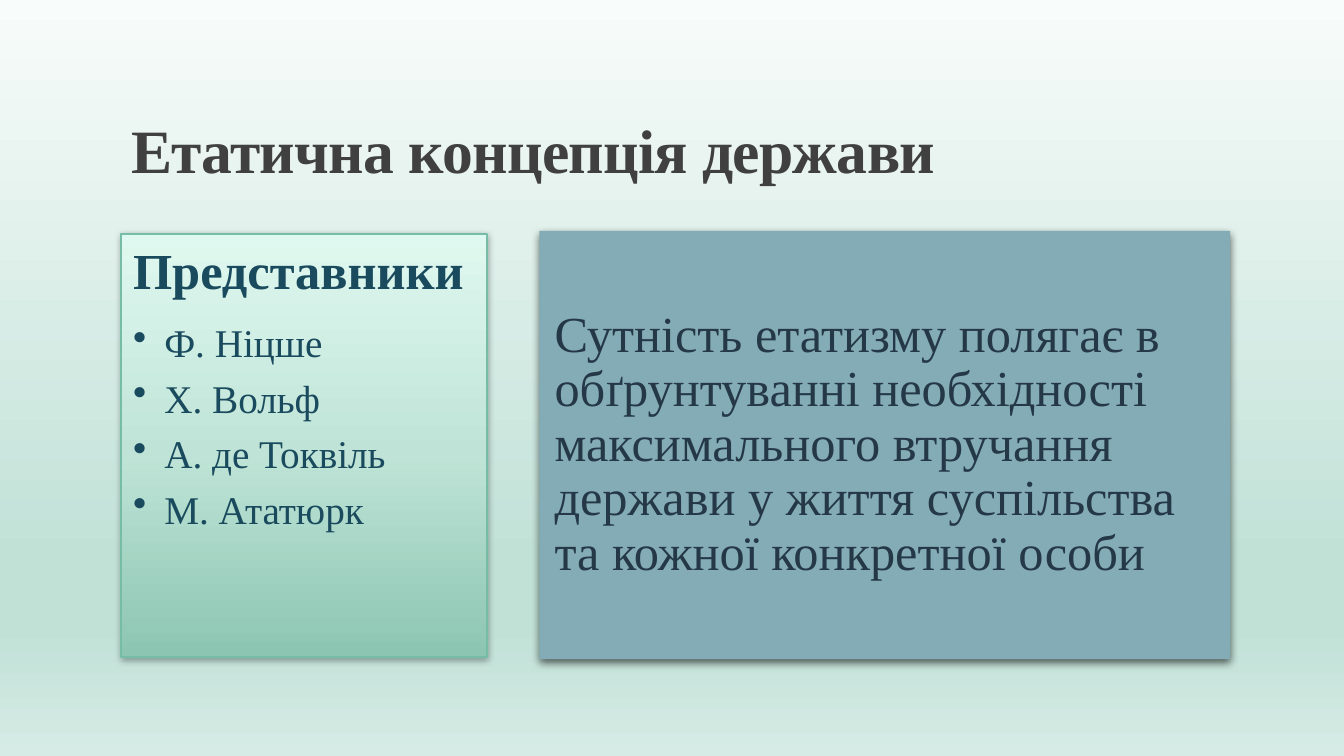
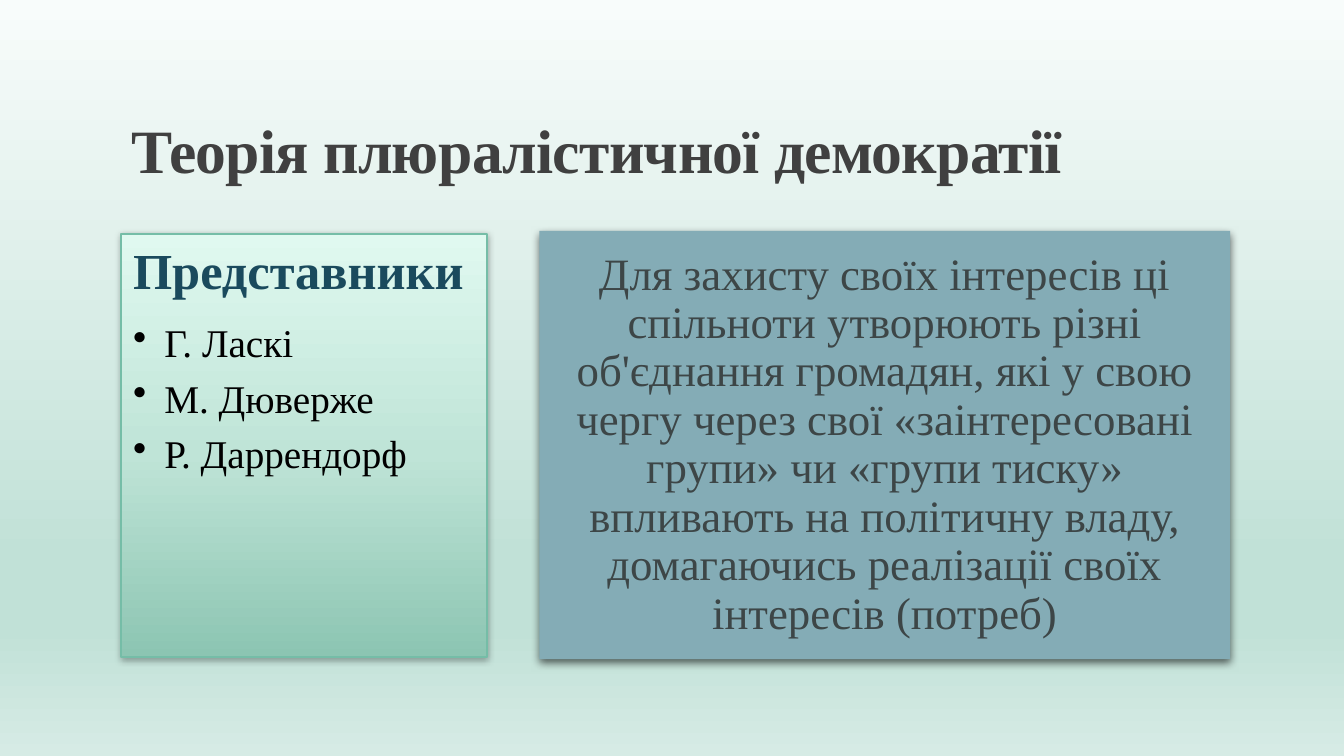
from dataclasses import dataclass

from lxml import etree
from pptx import Presentation
from pptx.dml.color import RGBColor
from pptx.enum.shapes import MSO_SHAPE
from pptx.enum.text import MSO_ANCHOR, MSO_AUTO_SIZE, PP_ALIGN
from pptx.oxml.ns import qn
from pptx.util import Inches, Pt

RECTANGLE = MSO_SHAPE.RECTANGLE
TOP, MIDDLE, BOTTOM = MSO_ANCHOR.TOP, MSO_ANCHOR.MIDDLE, MSO_ANCHOR.BOTTOM
LEFT, CENTER = PP_ALIGN.LEFT, PP_ALIGN.CENTER
NO_AUTOFIT = MSO_AUTO_SIZE.NONE

FONT = "Times New Roman"
TITLE_GREY = RGBColor(0x40, 0x40, 0x40)
DEEP_TEAL = RGBColor(0x1A, 0x4A, 0x5D)
NAVY = RGBColor(0x25, 0x38, 0x48)
SLATE = RGBColor(0x3D, 0x46, 0x47)
BLACK = RGBColor(0x00, 0x00, 0x00)
MINT_LINE = RGBColor(0x75, 0xBD, 0xA7)
STEEL_BLUE = RGBColor(0x84, 0xAC, 0xB6)

# Gradient stops: position in percent, colour
BACKGROUND_STOPS = (
    (0, RGBColor(0xF8, 0xFC, 0xFB)),
    (74, RGBColor(0xC1, 0xE1, 0xD7)),
    (83, RGBColor(0xC1, 0xE1, 0xD7)),
    (100, RGBColor(0xD6, 0xEB, 0xE5)),
)
PANEL_STOPS = (
    (0, RGBColor(0x8C, 0xC5, 0xB2)),
    (48, RGBColor(0xBF, 0xE4, 0xD7)),
    (100, RGBColor(0xE0, 0xF9, 0xF0)),
)
DOWNWARD, UPWARD = 270, 90


@dataclass(frozen=True)
class Box:
    left: float
    top: float
    width: float
    height: float

    def lengths(self) -> tuple:
        return tuple(Inches(v) for v in (self.left, self.top, self.width, self.height))


@dataclass(frozen=True)
class Shadow:
    opacity: int
    blur: float
    distance: float


@dataclass(frozen=True)
class Concept:
    title: str
    thinkers: tuple
    thinker_color: RGBColor
    essence: str
    essence_size: int
    essence_color: RGBColor
    essence_align: PP_ALIGN
    essence_inset: float


TITLE_BOX = Box(1.2, 0.31, 11, 1.59)
THINKERS_BOX = Box(1.2, 2.32, 3.63, 4.2)
ESSENCE_BOX = Box(5.35, 2.29, 6.85, 4.25)
THINKERS_SHADOW = Shadow(32, 5, 1)
ESSENCE_SHADOW = Shadow(60, 6, 3)
THINKERS_INSET = 0.12
BULLET_INDENT = Inches(0.31)
HEADING = "Представники"

CONCEPTS = (
    Concept(
        "Етатична концепція держави",
        ("Ф. Ніцше", "Х. Вольф", "А. де Токвіль", "М. Ататюрк"),
        DEEP_TEAL,
        "Сутність етатизму полягає в обґрунтуванні необхідності максимального "
        "втручання держави у життя суспільства та кожної конкретної особи",
        36, NAVY, LEFT, 0.15,
    ),
    Concept(
        "Теорія плюралістичної демократії",
        ("Г. Ласкі", "М. Дюверже", "Р. Даррендорф"),
        BLACK,
        "Для захисту своїх інтересів ці спільноти утворюють різні об'єднання "
        "громадян, які у свою чергу через свої «заінтересовані групи» чи «групи "
        "тиску» впливають на політичну владу, домагаючись реалізації своїх "
        "інтересів (потреб)",
        32, SLATE, CENTER, 0.13,
    ),
)


def apply(target, values: dict) -> None:
    for name, value in values.items():
        setattr(target, name, value)


def set_gradient(fill, owner, stops: tuple, angle: int) -> None:
    """Fill with any number of stops; owner is the element holding the fill."""
    fill.gradient()
    fill.gradient_angle = angle
    stop_list = owner.find(".//" + qn("a:gsLst"))
    for old_stop in list(stop_list):
        stop_list.remove(old_stop)
    for position, color in stops:
        stop = etree.SubElement(stop_list, qn("a:gs"), pos=str(position * 1000))
        etree.SubElement(stop, qn("a:srgbClr"), val=str(color))


def set_shadow(shape, shadow: Shadow) -> None:
    shape.shadow.inherit = False
    effects = shape.element.spPr.find(qn("a:effectLst"))
    outer = etree.SubElement(
        effects, qn("a:outerShdw"), blurRad=str(Pt(shadow.blur)),
        dist=str(Pt(shadow.distance)), dir="5400000", algn="ctr", rotWithShape="0")
    color = etree.SubElement(outer, qn("a:srgbClr"), val=str(BLACK))
    etree.SubElement(color, qn("a:alpha"), val=str(shadow.opacity * 1000))


def write(paragraph, text: str, size: int, color: RGBColor, bold: bool = False,
          **layout):
    run = paragraph.add_run()
    run.text = text
    apply(run.font, {"name": FONT, "size": Pt(size), "bold": bold})
    run.font.color.rgb = color
    apply(paragraph, {"alignment": LEFT, **layout})
    return run


def add_bullet(paragraph) -> None:
    properties = paragraph._p.get_or_add_pPr()
    properties.set("marL", str(BULLET_INDENT))
    properties.set("indent", str(-BULLET_INDENT))
    etree.SubElement(properties, qn("a:buChar"), char="•")


def add_panel(slide, box: Box, shadow: Shadow, inset: float, anchor: MSO_ANCHOR):
    panel = slide.shapes.add_shape(RECTANGLE, *box.lengths())
    set_shadow(panel, shadow)
    margins = {f"margin_{side}": Inches(inset)
               for side in ("left", "top", "right", "bottom")}
    apply(panel.text_frame,
          {"word_wrap": True, "vertical_anchor": anchor, **margins})
    return panel


def add_title(slide, text: str) -> None:
    title = slide.shapes.title
    apply(title, dict(zip(("left", "top", "width", "height"), TITLE_BOX.lengths())))
    apply(title.text_frame, {"vertical_anchor": BOTTOM, "word_wrap": True,
                             "auto_size": NO_AUTOFIT})
    run = write(title.text_frame.paragraphs[0], text, 44, TITLE_GREY, True,
                line_spacing=0.85)
    run.font._element.set("spc", "-50")


def add_thinkers(slide, concept: Concept) -> None:
    panel = add_panel(slide, THINKERS_BOX, THINKERS_SHADOW, THINKERS_INSET, TOP)
    set_gradient(panel.fill, panel.element, PANEL_STOPS, UPWARD)
    panel.line.color.rgb = MINT_LINE
    panel.line.width = Pt(1)
    frame = panel.text_frame
    write(frame.paragraphs[0], HEADING, 36, DEEP_TEAL, True,
          line_spacing=0.9, space_after=Pt(13))
    for thinker in concept.thinkers:
        paragraph = frame.add_paragraph()
        write(paragraph, thinker, 28, concept.thinker_color,
              level=1, space_after=Pt(6))
        add_bullet(paragraph)


def add_essence(slide, concept: Concept) -> None:
    panel = add_panel(slide, ESSENCE_BOX, ESSENCE_SHADOW, concept.essence_inset, MIDDLE)
    panel.fill.solid()
    panel.fill.fore_color.rgb = STEEL_BLUE
    panel.line.fill.background()
    write(panel.text_frame.paragraphs[0], concept.essence, concept.essence_size,
          concept.essence_color, alignment=concept.essence_align,
          line_spacing=0.9, space_after=Pt(8))


def main() -> None:
    prs = Presentation()
    apply(prs, {"slide_width": Inches(13.33), "slide_height": Inches(7.5)})

    # Shared background
    master = prs.slide_master
    set_gradient(master.background.fill, master.element, BACKGROUND_STOPS, DOWNWARD)

    # One slide per concept
    title_only = prs.slide_layouts[5]
    for concept in CONCEPTS:
        slide = prs.slides.add_slide(title_only)
        add_title(slide, concept.title)
        add_thinkers(slide, concept)
        add_essence(slide, concept)

    prs.save("out.pptx")


if __name__ == "__main__":
    main()
